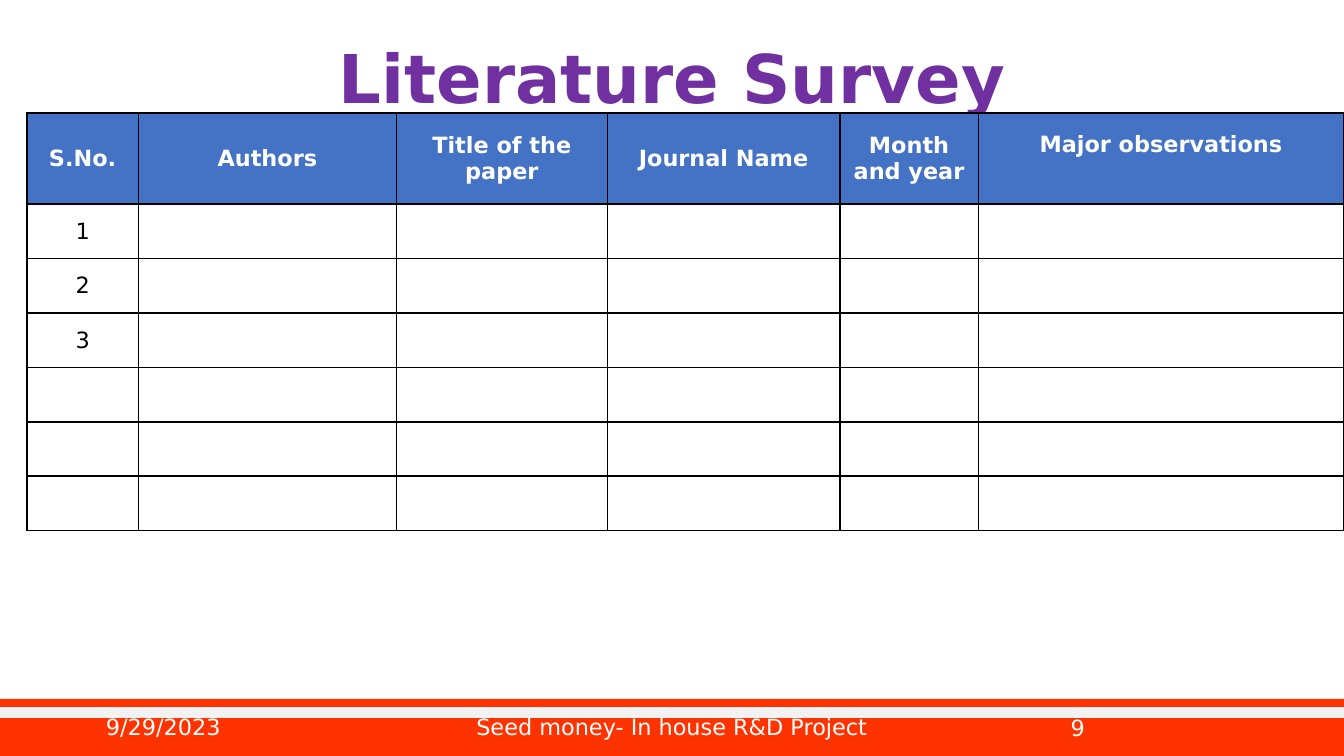
from lxml import etree
from pptx import Presentation
from pptx.dml.color import RGBColor
from pptx.enum.shapes import MSO_CONNECTOR, MSO_SHAPE
from pptx.enum.text import MSO_ANCHOR, MSO_AUTO_SIZE, PP_ALIGN
from pptx.oxml.ns import qn
from pptx.util import Inches, Pt

# Content
TITLE = "Literature Survey"
HEADERS = ["S.No.", "Authors", "Title of the paper", "Journal Name",
           "Month and year", "Major observations"]
NUMBERS = ["1", "2", "3", "", "", ""]
FOOTERS = [  # text, left, width, height, alignment
    ("9/29/2023", 0.69, 2.25, 0.21, PP_ALIGN.LEFT),
    ("Seed money- In house R&D Project", 3.31, 3.38, 0.21, PP_ALIGN.CENTER),
    ("9", 7.06, 1.11, 0.22, PP_ALIGN.RIGHT),
]

# Style
FONT = "DejaVu Sans"
COLORS = {"title": "7030A0", "header": "4472C4", "bar": "FF3300",
          "stripe": "F2F2F2", "white": "FFFFFF", "black": "000000"}
COL_WIDTHS = [0.83, 1.92, 1.57, 1.73, 1.03, 2.72]
HEADER_H, BODY_H = 0.68, 2.43


def rgb(name):
    return RGBColor.from_string(COLORS[name])


def write(tf, text, size, color, align, bold=False):
    tf.word_wrap = True
    tf.vertical_anchor = MSO_ANCHOR.MIDDLE
    p = tf.paragraphs[0]
    p.text = text
    p.alignment = align
    for r in p.runs:
        r.font.name, r.font.size, r.font.bold = FONT, Pt(size), bold
        r.font.color.rgb = rgb(color)
    return p


def add_borders(cell):
    tc_pr = cell._tc.get_or_add_tcPr()
    for i, side in enumerate(("lnL", "lnR", "lnT", "lnB")):
        ln = etree.Element(qn(f"a:{side}"), w=str(Pt(1)))
        fill = etree.SubElement(ln, qn("a:solidFill"))
        etree.SubElement(fill, qn("a:srgbClr"), val=COLORS["black"])
        tc_pr.insert(i, ln)


# Widescreen 16:9 slide
prs = Presentation()
prs.slide_width = Inches(10)
prs.slide_height = prs.slide_width * 9 // 16
s = prs.slides.add_slide(prs.slide_layouts[5])

# Footer bar and stripe
bar = s.shapes.add_shape(MSO_SHAPE.RECTANGLE, Inches(-0.02), Inches(5.2),
                         Inches(10.02), Inches(0.43))
bar.shadow.inherit = False
bar.fill.solid()
bar.fill.fore_color.rgb = rgb("bar")
bar.line.fill.background()
stripe = s.shapes.add_connector(MSO_CONNECTOR.STRAIGHT, Inches(-0.02), Inches(5.3),
                                Inches(10), Inches(5.3))
stripe.line.color.rgb = rgb("stripe")
stripe.line.width = Pt(6)
etree.SubElement(stripe._element.spPr, qn("a:effectLst"))

# Title
title = s.shapes.title
title.left, title.top = Inches(0.69), Inches(0.3)
title.width, title.height = Inches(8.62), Inches(0.62)
title.text_frame.auto_size = MSO_AUTO_SIZE.NONE
p = write(title.text_frame, TITLE, 36, "title", PP_ALIGN.CENTER, True)
p.line_spacing = 0.9

# Footer texts
for text, left, width, height, align in FOOTERS:
    box = s.shapes.add_textbox(Inches(left), Inches(5.3), Inches(width), Inches(height))
    write(box.text_frame, text, 12, "white", align)

# Survey table
rows = [HEADERS] + [[n] + [""] * (len(HEADERS) - 1) for n in NUMBERS]
heights = [HEADER_H] + [BODY_H / len(NUMBERS)] * len(NUMBERS)
table = s.shapes.add_table(len(rows), len(HEADERS), Inches(0.2), Inches(0.84),
                           Inches(sum(COL_WIDTHS)), Inches(sum(heights))).table
table.horz_banding = False
for col, width in zip(table.columns, COL_WIDTHS):
    col.width = Inches(width)
for i, (row, height) in enumerate(zip(rows, heights)):
    table.rows[i].height = Inches(height)
    header = i == 0
    for j, text in enumerate(row):
        cell = table.cell(i, j)
        cell.fill.solid()
        cell.fill.fore_color.rgb = rgb("header" if header else "white")
        write(cell.text_frame, text, 12, "white" if header else "black",
              PP_ALIGN.CENTER, header)
        cell.vertical_anchor = MSO_ANCHOR.MIDDLE
        add_borders(cell)
# The last heading sits slightly above the middle
table.cell(0, len(HEADERS) - 1).margin_bottom = Inches(0.25)

prs.save("out.pptx")
